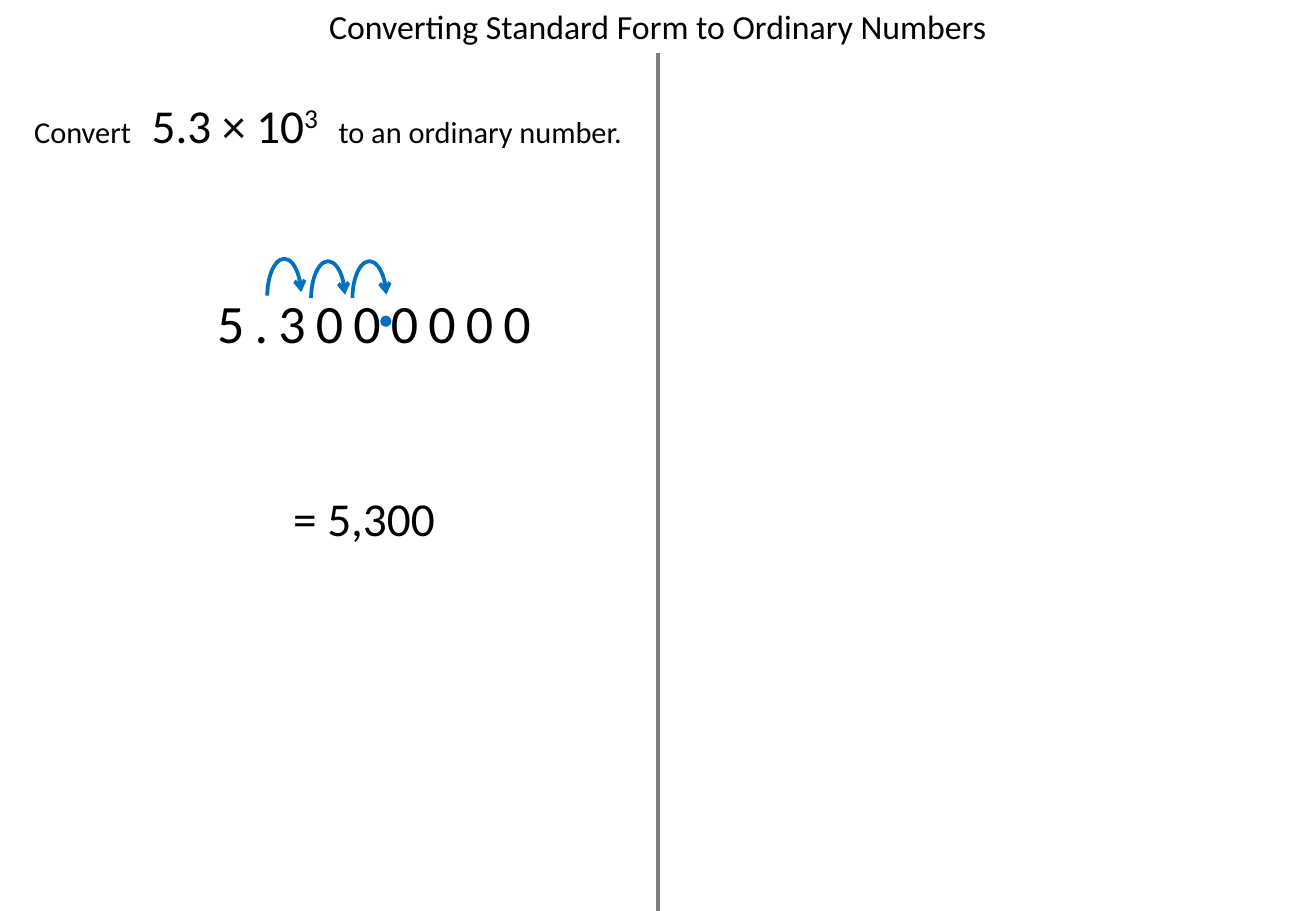
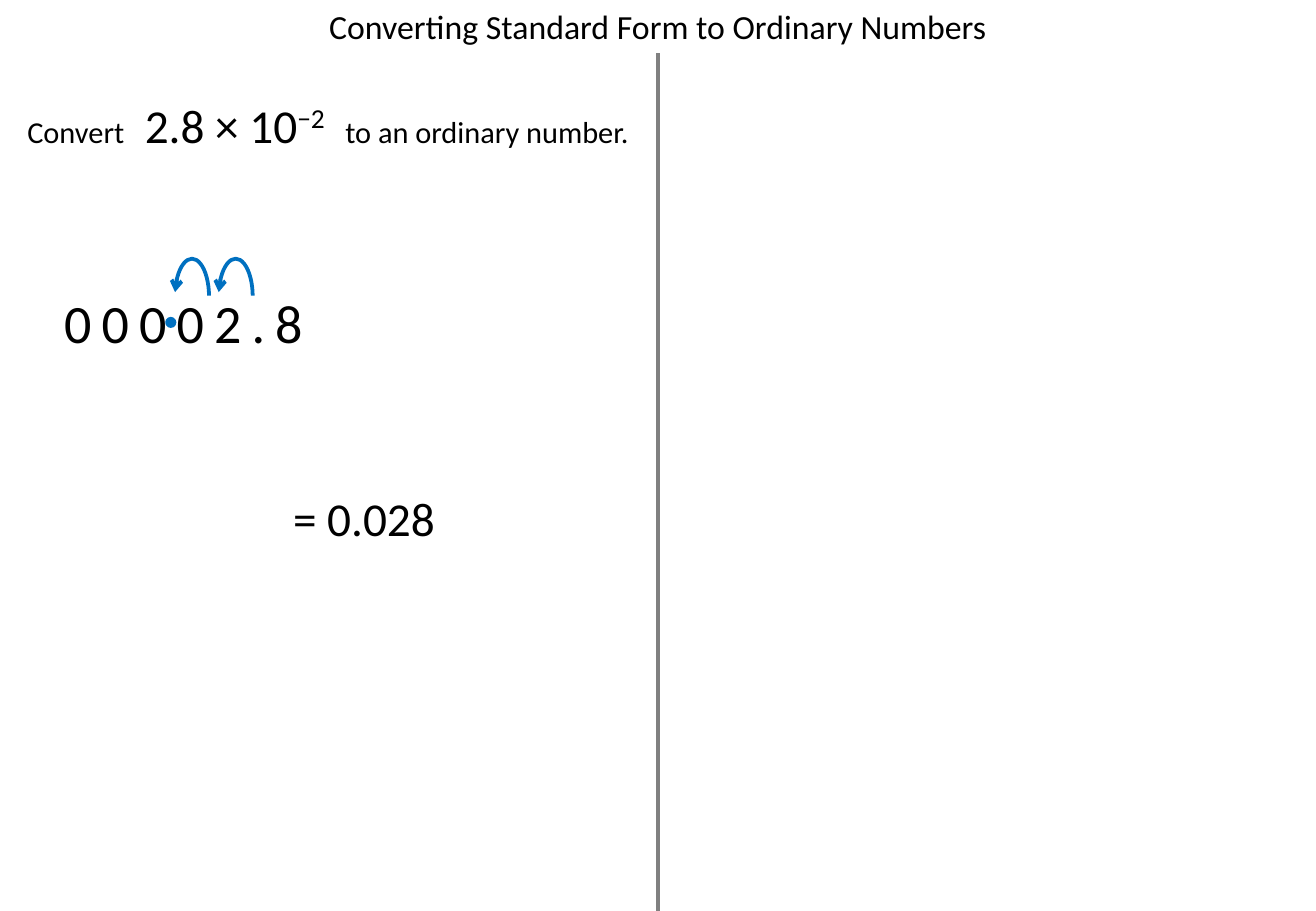
from lxml.etree import SubElement
from pptx import Presentation
from pptx.dml.color import RGBColor
from pptx.enum.shapes import MSO_CONNECTOR, MSO_SHAPE
from pptx.enum.text import MSO_AUTO_SIZE, PP_ALIGN
from pptx.oxml.ns import qn
from pptx.util import Inches, Pt

WIDTH, HEIGHT = Inches(10.83), Inches(7.5)
COLORS = {"text": "000000", "divider": "808080", "accent": "0070C0"}
FONT = "Calibri"
TITLE = "Converting Standard Form to Ordinary Numbers"
TITLE_WIDTH, TITLE_HEIGHT = 52.26, 5.87
ARC_ANGLES = (109.54, 207.56)
GAP = (" ", 18, {"spc": 810})  # one widened space around the expression

EXAMPLES = [
    {
        "mantissa": "5.3", "exponent": "3",
        "digits": "5.3000000", "digits_left": 15.6, "digits_width": 26.78,
        "point": (28.99, 34.8),
        "hops": [(20.31, 28.4), (23.64, 28.67), (26.78, 28.67)],
        "leftward": False,
        "answer": "= 5,300",
    },
    {
        "mantissa": "2.8", "exponent": "−2",
        "digits": "00002.8", "digits_left": 3.97, "digits_width": 20.96,
        "point": (12.65, 34.93),
        "hops": [(16.62, 28.4), (13.3, 28.4)],
        "leftward": True,
        "answer": "= 0.028",
    },
]


# Lengths as percentages of the slide
def across(percent):
    return round(WIDTH * percent / 100)


def down(percent):
    return round(HEIGHT * percent / 100)


def area(left, top, width, height):
    return across(left), down(top), across(width), down(height)


def color(name):
    return RGBColor.from_string(COLORS[name])


def set_line(shape, name, width):
    shape.line.color.rgb = color(name)
    shape.line.width = Pt(width)


# Element kinds
def add_text(slide, box, runs, wrap=True, align=PP_ALIGN.CENTER):
    """Each run is (text, size, run attributes)."""
    frame = slide.shapes.add_textbox(*area(*box)).text_frame
    frame.word_wrap = wrap
    frame.auto_size = MSO_AUTO_SIZE.SHAPE_TO_FIT_TEXT
    paragraph = frame.paragraphs[0]
    paragraph.alignment = align
    for text, size, attributes in runs:
        run = paragraph.add_run()
        run.text = text
        run.font.name = FONT
        run.font.size = Pt(size)
        run.font.color.rgb = color("text")
        for key, value in attributes.items():
            run.font._element.set(key, str(value))


def add_divider(slide):
    divider = slide.shapes.add_connector(
        MSO_CONNECTOR.STRAIGHT, across(50), down(TITLE_HEIGHT), across(50), HEIGHT)
    set_line(divider, "divider", 2.25)
    SubElement(divider._element.spPr, qn("a:effectLst"))


def add_point(slide, left, top):
    point = slide.shapes.add_shape(MSO_SHAPE.OVAL, *area(left, top, 0.65, 0.93))
    point.shadow.inherit = False
    point.fill.solid()
    point.fill.fore_color.rgb = color("accent")
    set_line(point, "accent", 1.5)


def add_hop(slide, left, top, leftward):
    hop = slide.shapes.add_shape(MSO_SHAPE.ARC, *area(left, top, 2.59, 8.27))
    hop.shadow.inherit = False
    hop.fill.background()
    set_line(hop, "accent", 2.25)
    for index, angle in enumerate(ARC_ANGLES):
        hop.adjustments[index] = angle
    properties = hop._element.spPr
    SubElement(properties.find(qn("a:ln")), qn("a:tailEnd"), type="arrow")
    if leftward:
        properties.find(qn("a:xfrm")).set("flipH", "1")


# One worked example per slide
def add_example(presentation, example):
    slide = presentation.slides.add_slide(presentation.slide_layouts[6])
    add_divider(slide)
    add_text(slide, ((100 - TITLE_WIDTH) / 2, 0, TITLE_WIDTH, TITLE_HEIGHT),
             [(TITLE, 20, {})], wrap=False)
    add_text(slide, (-1.66, 9.87, 53.19, 7.6), [
        ("Convert", 18, {}),
        GAP,
        (f"{example['mantissa']} × 10", 28, {}),
        (example["exponent"], 28, {"baseline": 30000}),
        GAP,
        ("to an ordinary number.", 18, {}),
    ])
    add_text(slide, (example["digits_left"], 31.07, example["digits_width"], 8.53),
             [(example["digits"], 32, {"spc": 600})], wrap=False, align=PP_ALIGN.LEFT)
    add_point(slide, *example["point"])
    for left, top in example["hops"]:
        add_hop(slide, left, top, example["leftward"])
    add_text(slide, (19.48, 53.07, 16.34, 7.6), [(example["answer"], 28, {})])


def main():
    presentation = Presentation()
    presentation.slide_width, presentation.slide_height = WIDTH, HEIGHT
    for example in EXAMPLES:
        add_example(presentation, example)
    presentation.save("out.pptx")


if __name__ == "__main__":
    main()
